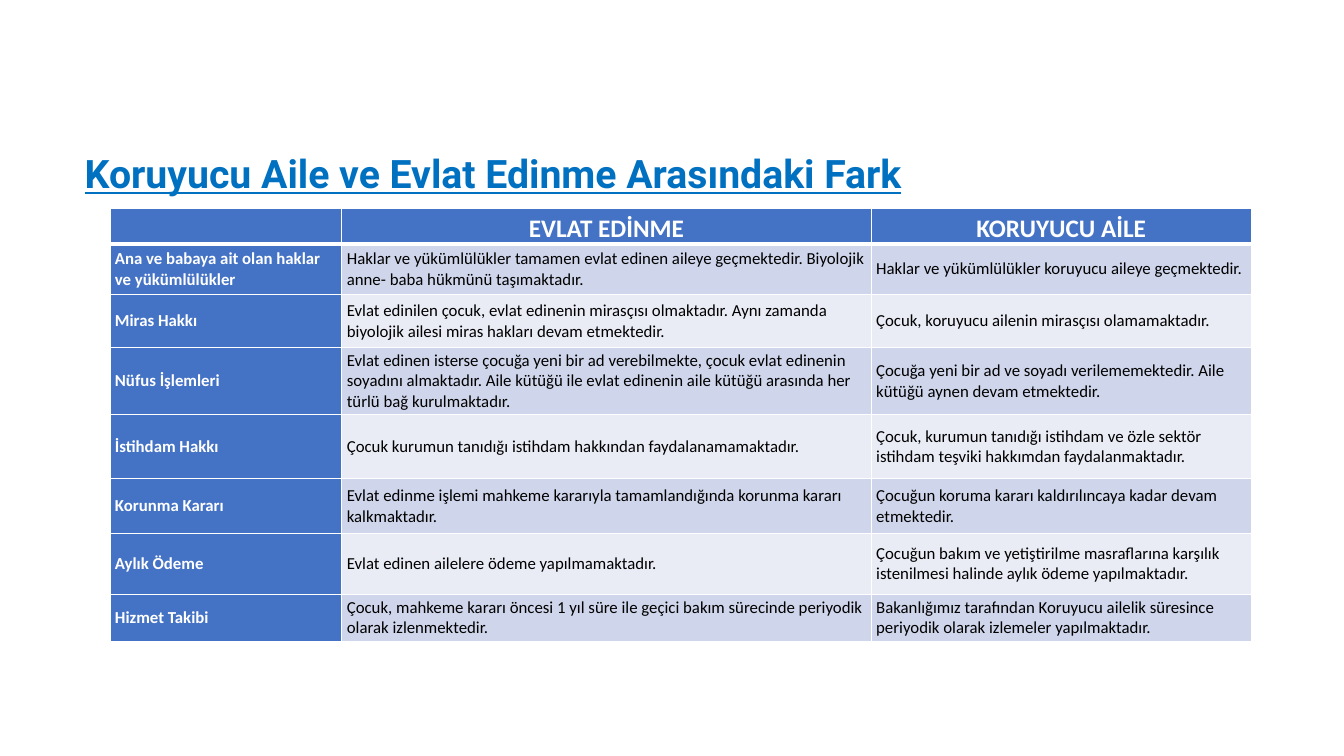
from lxml.etree import SubElement
from pptx import Presentation
from pptx.dml.color import RGBColor
from pptx.enum.text import MSO_ANCHOR as Anchor, MSO_AUTO_SIZE as AutoSize, PP_ALIGN as Align
from pptx.oxml.ns import qn
from pptx.util import Emu, Pt

EMU_PER_PX = 9144  # 100 px to the inch
COLORS = {
    "title": "0070C0",
    "header": "4472C4",
    "odd": "CFD5EA",
    "even": "E9EBF5",
    "white": "FFFFFF",
    "black": "000000",
}
COLUMN_WIDTHS = [230, 525, 377]
ROW_HEIGHTS = [33, 50, 53, 66, 64, 54, 61, 46]
ROWS = [
    ("", "EVLAT EDİNME", "KORUYUCU AİLE"),
    ("Ana ve babaya ait olan haklar ve yükümlülükler",
     "Haklar ve yükümlülükler tamamen evlat edinen aileye geçmektedir. "
     "Biyolojik anne- baba hükmünü taşımaktadır.",
     "Haklar ve yükümlülükler koruyucu aileye geçmektedir."),
    ("Miras Hakkı",
     "Evlat edinilen çocuk, evlat edinenin mirasçısı olmaktadır. "
     "Aynı zamanda biyolojik ailesi miras hakları devam etmektedir.",
     "Çocuk, koruyucu ailenin mirasçısı olamamaktadır."),
    ("Nüfus İşlemleri",
     "Evlat edinen isterse çocuğa yeni bir ad verebilmekte, çocuk evlat edinenin "
     "soyadını almaktadır. Aile kütüğü ile evlat edinenin aile kütüğü arasında "
     "her türlü bağ kurulmaktadır.",
     "Çocuğa yeni bir ad ve soyadı verilememektedir. "
     "Aile kütüğü aynen devam etmektedir."),
    ("İstihdam Hakkı",
     "Çocuk kurumun tanıdığı istihdam hakkından faydalanamamaktadır.",
     "Çocuk, kurumun tanıdığı istihdam ve özle sektör istihdam teşviki "
     "hakkımdan faydalanmaktadır."),
    ("Korunma Kararı",
     "Evlat edinme işlemi mahkeme kararıyla tamamlandığında korunma kararı kalkmaktadır.",
     "Çocuğun koruma kararı kaldırılıncaya kadar devam etmektedir."),
    ("Aylık Ödeme",
     "Evlat edinen ailelere ödeme yapılmamaktadır.",
     "Çocuğun bakım ve yetiştirilme masraflarına karşılık istenilmesi halinde "
     "aylık ödeme yapılmaktadır."),
    ("Hizmet Takibi",
     "Çocuk, mahkeme kararı öncesi 1 yıl süre ile geçici bakım sürecinde "
     "periyodik olarak izlenmektedir.",
     "Bakanlığımız tarafından Koruyucu ailelik süresince periyodik olarak "
     "izlemeler yapılmaktadır."),
]


def px(length):
    return Emu(length * EMU_PER_PX)


def write_text(frame, text, *, size, color, font="Calibri", bold=False,
               underline=False, align=Align.LEFT, spacing=1.0):
    para = frame.paragraphs[0]
    para.alignment = align
    para.line_spacing = spacing
    span = para.add_run()
    span.text = text
    span.font.name = font
    span.font.size = Pt(size)
    span.font.bold = bold
    span.font.underline = underline
    span.font.color.rgb = RGBColor.from_string(COLORS[color])


class SlideBuilder:
    def __init__(self, deck):
        self.page = deck.slides.add_slide(deck.slide_layouts[5])

    def title(self, text, left, top, width, height):
        box = self.page.shapes.title
        box.left, box.top, box.width, box.height = map(px, (left, top, width, height))
        frame = box.text_frame
        frame.word_wrap = True
        frame.auto_size = AutoSize.NONE
        frame.vertical_anchor = Anchor.MIDDLE
        write_text(frame, text, size=28, color="title", font="Roboto",
                   bold=True, underline=True, spacing=0.9)

    def borders(self, cell, **widths):
        properties = cell._tc.get_or_add_tcPr()
        for side in ("L", "R", "T", "B"):
            line = SubElement(properties, qn(f"a:ln{side}"), w=str(Pt(widths.get(side, 1))))
            fill = SubElement(line, qn("a:solidFill"))
            SubElement(fill, qn("a:srgbClr"), val=COLORS["white"])

    def cell(self, cell, text, row, column):
        is_header, is_label = row == 0, column == 0
        cell.margin_left = cell.margin_right = px(5)
        cell.margin_top = cell.margin_bottom = 0
        cell.vertical_anchor = Anchor.MIDDLE

        # The rule under the header is thicker than the others
        self.borders(cell, T=3 if row == 1 else 1, B=3 if is_header else 1)
        band = "header" if is_header or is_label else "odd" if row % 2 else "even"
        cell.fill.solid()
        cell.fill.fore_color.rgb = RGBColor.from_string(COLORS[band])

        if is_header and text:
            write_text(cell.text_frame, text, size=18, color="white", bold=True,
                       align=Align.CENTER, spacing=1.15)
        elif text:
            write_text(cell.text_frame, text, size=12, bold=is_label,
                       color="white" if is_label else "black")

    def table(self, rows, left, top, widths, heights):
        frame = self.page.shapes.add_table(
            len(rows), len(widths), px(left), px(top), px(sum(widths)), px(sum(heights)))
        table = frame.table
        for column, width in zip(table.columns, widths):
            column.width = px(width)
        for row, height in zip(table.rows, heights):
            row.height = px(height)
        for row, texts in enumerate(rows):
            for column, text in enumerate(texts):
                self.cell(table.cell(row, column), text, row, column)


def main():
    deck = Presentation()
    deck.slide_width, deck.slide_height = px(1333), px(750)
    builder = SlideBuilder(deck)

    # Heading
    builder.title("Koruyucu Aile ve Evlat Edinme Arasındaki Fark", 74, 102, 1150, 145)

    # Comparison of adoption and foster care
    builder.table(ROWS, 109, 207, COLUMN_WIDTHS, ROW_HEIGHTS)

    deck.save("out.pptx")


if __name__ == "__main__":
    main()
